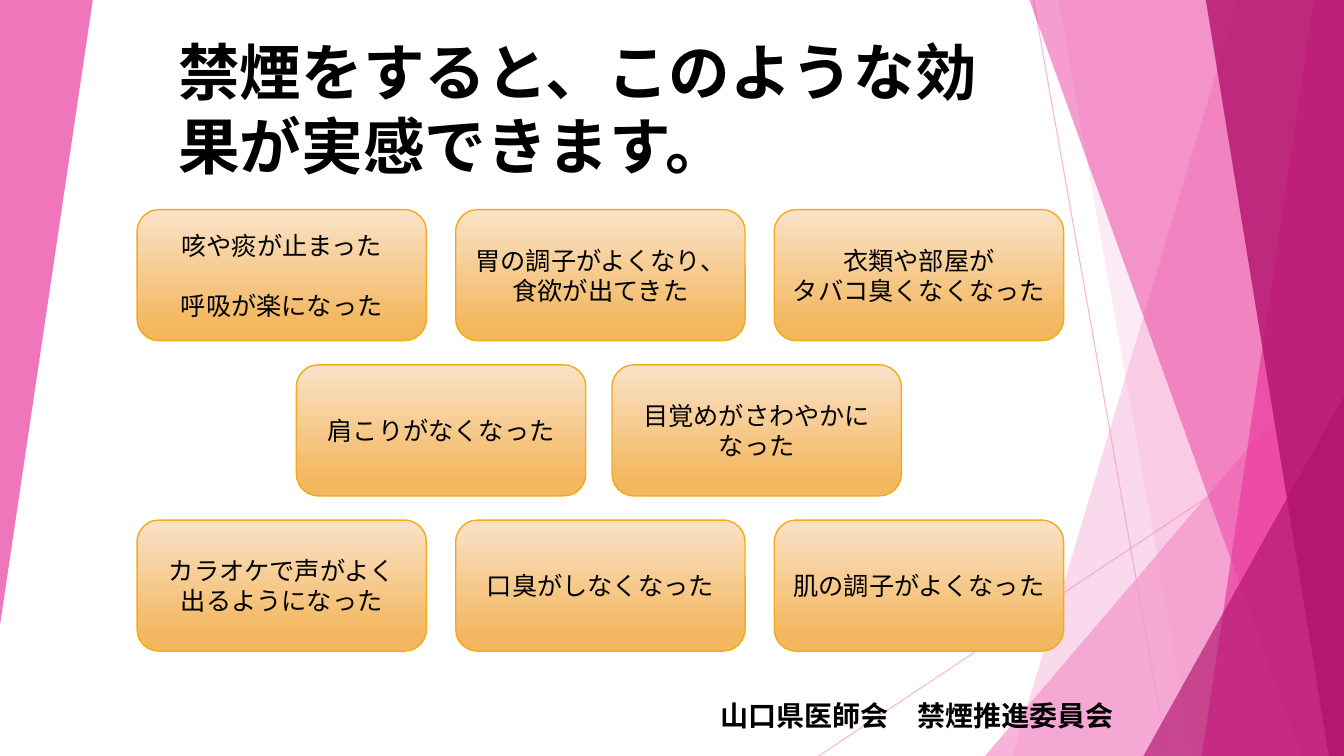
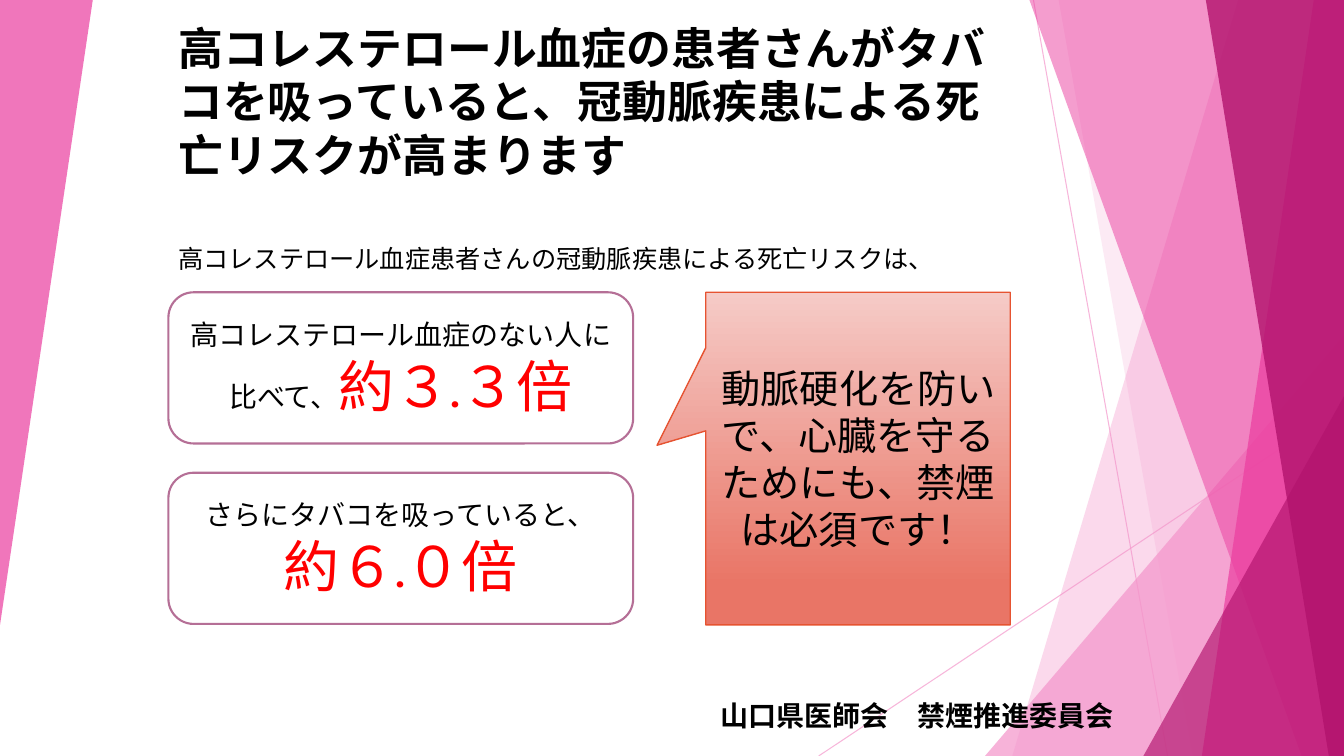
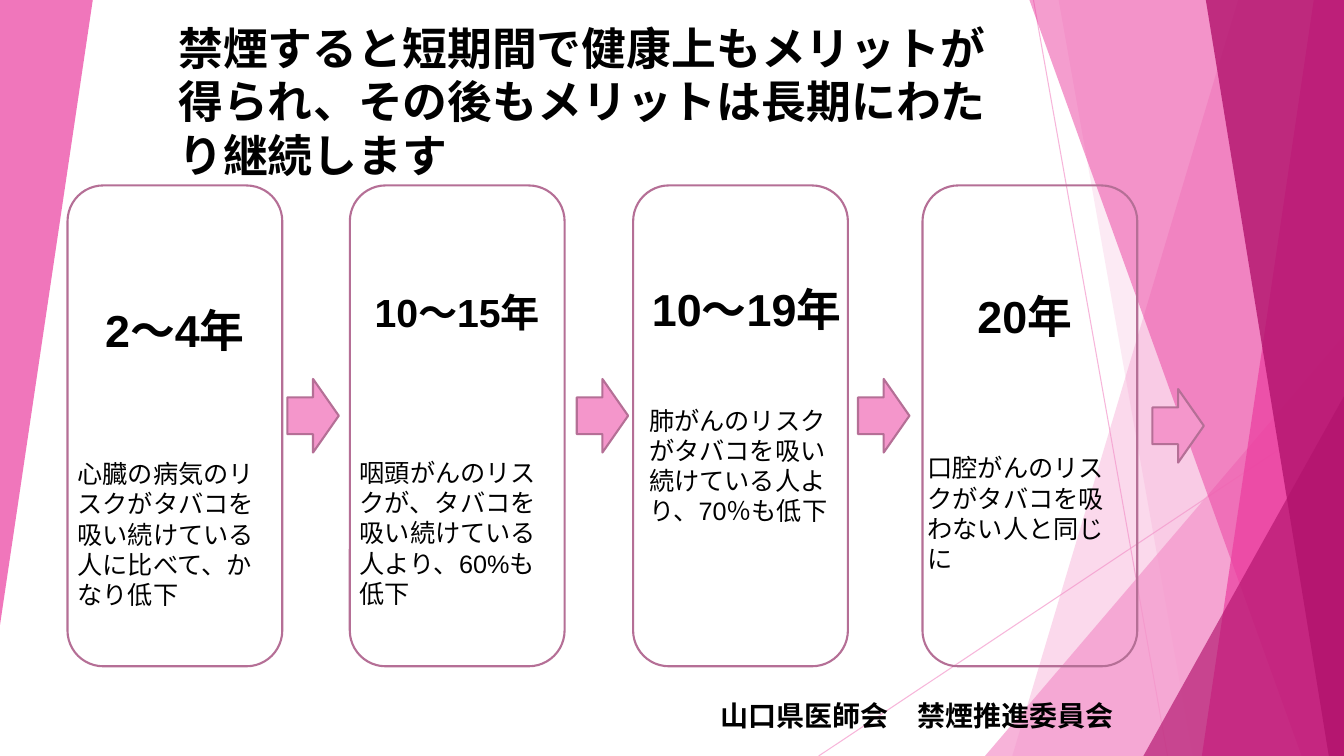
from dataclasses import dataclass
from typing import NamedTuple

from lxml.etree import SubElement
from pptx import Presentation
from pptx.dml.color import RGBColor
from pptx.enum.shapes import MSO_CONNECTOR, MSO_SHAPE
from pptx.enum.text import MSO_ANCHOR, PP_ALIGN
from pptx.oxml.ns import qn
from pptx.util import Pt

PX = 9144  # EMU per px, 100 px to the inch
WIDE, HIGH = 1333, 750

BLACK = RGBColor(0x00, 0x00, 0x00)
RED = RGBColor(0xFF, 0x00, 0x00)
PINK = RGBColor(0xF4, 0x96, 0xCB)
ROSE = RGBColor(0xEB, 0x3D, 0x9F)
WINE = RGBColor(0xB2, 0x13, 0x6D)
MAUVE = RGBColor(0xB5, 0x6F, 0x96)
CREAM = RGBColor(0xFA, 0xE2, 0xC8)
AMBER = RGBColor(0xF3, 0xB7, 0x5F)
GOLD = RGBColor(0xF2, 0xAC, 0x19)
BLUSH = RGBColor(0xF5, 0xCB, 0xC7)
CORAL = RGBColor(0xE9, 0x75, 0x66)
BRICK = RGBColor(0xE6, 0x53, 0x31)


class Box(NamedTuple):
    x: int
    y: int
    w: int
    h: int

    def emu(self) -> list[int]:
        return [v * PX for v in self]


@dataclass(frozen=True)
class Para:
    text: str
    size: int
    bold: bool = False
    align: PP_ALIGN = PP_ALIGN.LEFT
    gap: int = 0
    font: str = "Karla"


class Ray(NamedTuple):
    """A pane from the right edge, slanting between its top and foot."""
    top: int
    foot: int
    color: RGBColor
    alpha: int


class Peak(NamedTuple):
    box: Box
    color: RGBColor
    alpha: int
    turn: int = 0


class Row(NamedTuple):
    x: int
    step: int
    texts: list[list[str]]


class Stage(NamedTuple):
    card: int
    text: tuple[int, int]
    arrow: tuple[int, int]
    years: str
    size: int
    gap: int
    gain: str


LINES = [(1025, 0, 1158, HIGH), (WIDE, 403, 812, HIGH)]
PANES = [
    Ray(1228, 1004, PINK, 36),
    Ray(1050, 1183, PINK, 20),
    Peak(Box(977, 333, 356, 417), PINK, 72),
    Ray(1021, 1291, ROSE, 50),
    Ray(1303, 1192, ROSE, 70),
    Ray(1196, 1318, WINE, 80),
    Peak(Box(1134, 393, 199, 357), WINE, 66),
    Peak(Box(0, 0, 92, 620), ROSE, 70, 180),
]
ROWS = [
    Row(136, 316, [["咳や痰が止まった", "呼吸が楽になった"],
                   ["胃の調子がよくなり、", "食欲が出てきた"],
                   ["衣類や部屋が", "タバコ臭くなくなった"]]),
    Row(294, 313, [["肩こりがなくなった"], ["目覚めがさわやかになった"]]),
    Row(136, 316, [["カラオケで声がよく", "出るようになった"],
                   ["口臭がしなくなった"], ["肌の調子がよくなった"]]),
]
RISKS = [
    ("高コレステロール血症のない人に比べて、", "約３.３倍"),
    ("さらにタバコを吸っていると、", "約６.０倍"),
]
STAGES = [
    Stage(67, (67, 226), (285, 376), "2～4年", 32, 73,
          "心臓の病気のリスクがタバコを吸い続けている人に比べて、かなり低下"),
    Stage(347, (347, 212), (572, 376), "10～15年", 28, 87,
          "咽頭がんのリスクが、タバコを吸い続けている人より、60%も低下"),
    Stage(628, (634, 205), (851, 376), "10～19年", 32, 50,
          "肺がんのリスクがタバコを吸い続けている人より、70％も低下"),
    Stage(915, (910, 212), (1143, 386), "20年", 32, 79,
          "口腔がんのリスクがタバコを吸わない人と同じに"),
]


def fade(shape, alpha: int) -> None:
    """Set the opacity, in percent, of the shape's first colour."""
    color = next(shape.element.iter(qn("a:srgbClr")))
    SubElement(color, qn("a:alpha"), val=str(alpha * 1000))


def write(frame, paras: list[Para]) -> None:
    frame.word_wrap = True
    for i, item in enumerate(paras):
        para = frame.add_paragraph() if i else frame.paragraphs[0]
        para.text = item.text
        para.alignment = item.align
        if item.gap:
            para.space_before = Pt(item.gap)
        font = para.font
        font.name, font.size, font.bold = item.font, Pt(item.size), item.bold
        font.color.rgb = BLACK


def label(slide, box: Box, paras: list[Para]):
    frame = slide.shapes.add_textbox(*box.emu()).text_frame
    write(frame, paras)
    return frame


def form(slide, kind: MSO_SHAPE, box: Box, edge: RGBColor | None = None,
         width: float = 1.5, fill: RGBColor | None = None):
    shape = slide.shapes.add_shape(kind, *box.emu())
    shape.shadow.inherit = False
    shape.text_frame.vertical_anchor = MSO_ANCHOR.MIDDLE
    if fill is None:
        shape.fill.background()
    else:
        shape.fill.solid()
        shape.fill.fore_color.rgb = fill
    if edge is None:
        shape.line.fill.background()
    else:
        shape.line.color.rgb = edge
        shape.line.width = Pt(width)
    return shape


def blend(shape, top: RGBColor, foot: RGBColor) -> None:
    """Fill from top to foot."""
    shape.fill.gradient()
    shape.fill.gradient_angle = 270
    for stop, place, color in zip(shape.fill.gradient_stops, (0, 0.88), (top, foot)):
        stop.position = place
        stop.color.rgb = color


def draw_ray(slide, ray: Ray):
    pen = slide.shapes.build_freeform(ray.top, 0, scale=PX)
    pen.add_line_segments([(WIDE, 0), (WIDE, HIGH), (ray.foot, HIGH)], close=True)
    shape = pen.convert_to_shape()
    shape.shadow.inherit = False
    shape.fill.solid()
    shape.fill.fore_color.rgb = ray.color
    shape.line.fill.background()
    return shape


def draw_peak(slide, peak: Peak):
    shape = form(slide, MSO_SHAPE.ISOSCELES_TRIANGLE, peak.box, fill=peak.color)
    shape.adjustments[0] = 1
    shape.rotation = peak.turn
    return shape


def decorate(slide) -> None:
    """Draw the shared backdrop and footer, then move them to the layout."""
    layout = slide.slide_layout
    for holder in list(layout.placeholders):
        holder.element.getparent().remove(holder.element)
    for ends in LINES:
        line = slide.shapes.add_connector(MSO_CONNECTOR.STRAIGHT, *[v * PX for v in ends])
        line.line.color.rgb = PINK
        line.line.width = Pt(0.75)
        fade(line, 70)
        SubElement(line.element.spPr, qn("a:effectLst"))
    for pane in PANES:
        draw = draw_ray if isinstance(pane, Ray) else draw_peak
        fade(draw(slide, pane), pane.alpha)
    label(slide, Box(705, 688, 421, 44), [Para("山口県医師会　禁煙推進委員会", 20, True)])
    for shape in list(slide.shapes):
        layout.shapes.element.append(shape.element)


def title(slide, text: str, size: int) -> None:
    frame = label(slide, Box(167, 80, 849, 105), [Para(text, size, True)])
    frame.vertical_anchor = MSO_ANCHOR.BOTTOM


def effects(slide) -> None:
    title(slide, "禁煙をすると、このような効果が実感できます。", 44)
    for r, row in enumerate(ROWS):
        for c, texts in enumerate(row.texts):
            box = Box(row.x + c * row.step, 208 + r * 154, 287, 130)
            shape = form(slide, MSO_SHAPE.ROUNDED_RECTANGLE, box, GOLD, 1)
            blend(shape, CREAM, AMBER)
            gap = 21 if r == c == 0 else 0
            write(shape.text_frame, [
                Para(text, 18, align=PP_ALIGN.CENTER, gap=gap if i else 0)
                for i, text in enumerate(texts)])


def risks(slide) -> None:
    title(slide, "高コレステロール血症の患者さんがタバコを吸っていると、"
                 "冠動脈疾患による死亡リスクが高まります", 32)
    label(slide, Box(167, 236, 778, 71),
          [Para("高コレステロール血症患者さんの冠動脈疾患による死亡リスクは、", 18)])
    for i, (lead, rate) in enumerate(RISKS):
        box = Box(167, 290 + i * 179, 461, 150)
        frame = form(slide, MSO_SHAPE.ROUNDED_RECTANGLE, box, MAUVE).text_frame
        write(frame, [Para(lead, 20, align=PP_ALIGN.CENTER)])
        run = frame.paragraphs[0].add_run()
        run.text = rate
        run.font.size = Pt(40)
        run.font.color.rgb = RED
    call = form(slide, MSO_SHAPE.RECTANGULAR_CALLOUT, Box(700, 290, 302, 330), BRICK, 1)
    call.adjustments[0], call.adjustments[1] = -0.66, -0.04
    blend(call, BLUSH, CORAL)
    write(call.text_frame, [Para("動脈硬化を防いで、心臓を守るためにも、禁煙は必須です！",
                                 28, align=PP_ALIGN.CENTER)])


def merits(slide) -> None:
    title(slide, "禁煙すると短期間で健康上もメリットが得られ、"
                 "その後もメリットは長期にわたり継続します", 32)
    for stage in STAGES:
        form(slide, MSO_SHAPE.ROUNDED_RECTANGLE, Box(stage.card, 184, 213, 477), MAUVE)
        form(slide, MSO_SHAPE.RIGHT_ARROW, Box(*stage.arrow, 51, 73), MAUVE, fill=PINK)
        frame = label(slide, Box(*stage.text, 213, 436), [
            Para(stage.years, stage.size, True, PP_ALIGN.CENTER, font="Arial"),
            Para(stage.gain, 18, gap=stage.gap, font="Arial")])
        frame.margin_top = 74 * PX


def main() -> None:
    deck = Presentation()
    deck.slide_width, deck.slide_height = WIDE * PX, HIGH * PX
    blank = deck.slide_layouts[6]
    for i, build in enumerate((effects, risks, merits)):
        slide = deck.slides.add_slide(blank)
        if i == 0:
            decorate(slide)
        build(slide)
    deck.save("out.pptx")


if __name__ == "__main__":
    main()
